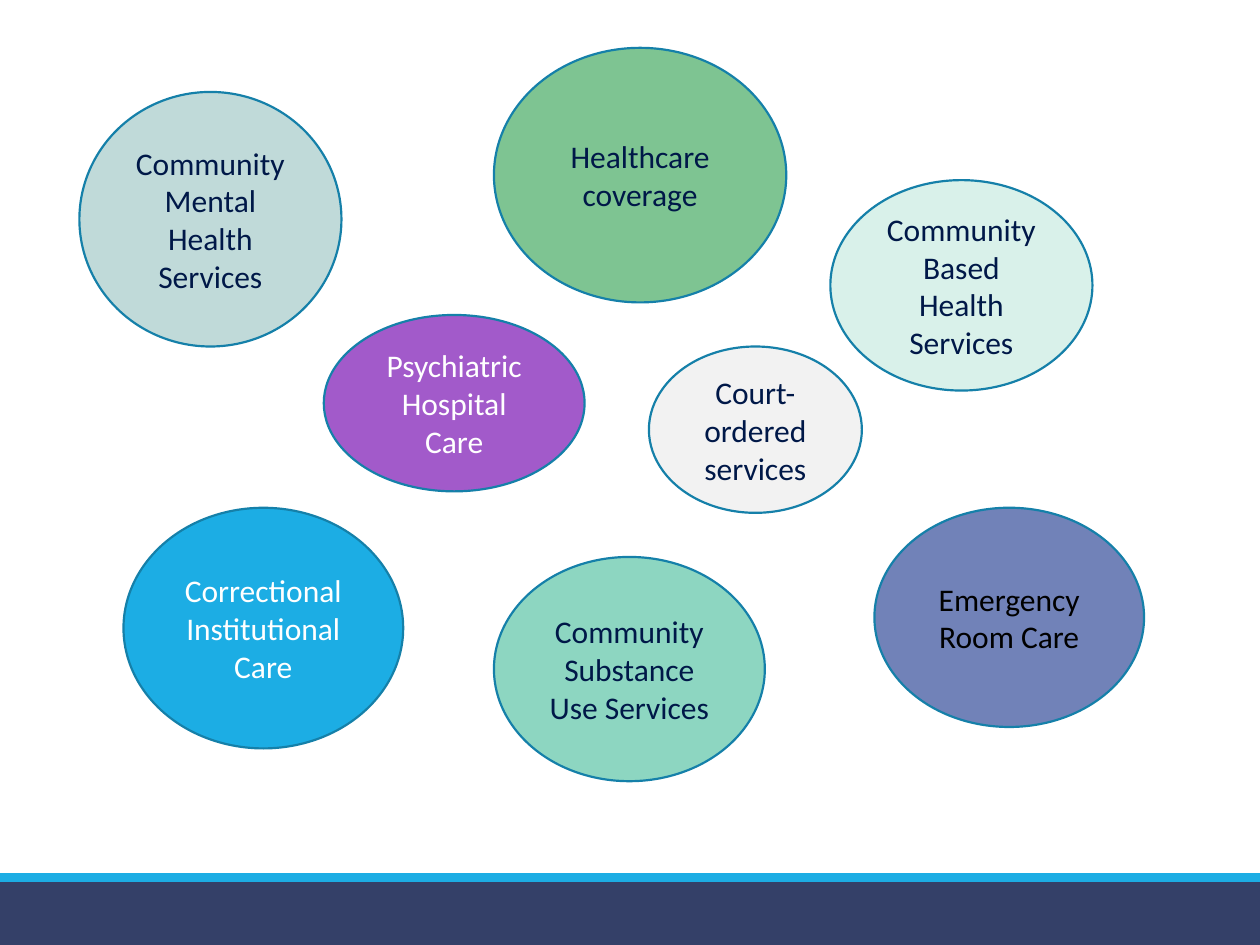
"""Build a slide of care services as scattered bubbles above a footer band."""
from pptx import Presentation
from pptx.dml.color import RGBColor
from pptx.enum.shapes import MSO_SHAPE
from pptx.enum.text import MSO_ANCHOR, PP_ALIGN
from pptx.util import Inches, Pt

NAVY, WHITE, BLACK = "001848", "FFFFFF", "000000"
EDGE = "1580A9"

BANDS = [
    ((0, 7, 10, 0.5), "344068"),
    ((0, 6.93, 10, 0.07), "1CADE4"),
]

BUBBLES = [
    ("Community Mental Health Services", (0.63, 0.73, 2.08, 2.02), "C0DAD9", NAVY),
    ("Community Substance Use Services", (3.92, 4.42, 2.15, 1.78), "8DD6C1", NAVY),
    ("Community Based Health Services", (6.59, 1.43, 2.08, 1.67), "D9F1EA", NAVY),
    ("Emergency Room Care", (6.94, 4.03, 2.14, 1.74), "7182B8", BLACK),
    ("Correctional Institutional Care", (0.98, 4.03, 2.22, 1.91), "1CADE4", WHITE),
    ("Psychiatric Hospital Care", (2.57, 2.5, 2.07, 1.4), "A25ACA", WHITE),
    ("Court-ordered services", (5.15, 2.75, 1.69, 1.32), "F2F2F2", NAVY),
    ("Healthcare coverage", (3.92, 0.38, 2.32, 2.02), "7EC492", NAVY),
]


def paint(target, color):
    target.solid()
    target.fore_color.rgb = RGBColor.from_string(color)


def add_form(slide, kind, box, color):
    form = slide.shapes.add_shape(kind, *map(Inches, box))
    form.shadow.inherit = False
    paint(form.fill, color)
    form.line.fill.background()
    return form


def add_bubble(slide, text, box, color, ink):
    bubble = add_form(slide, MSO_SHAPE.OVAL, box, color)
    paint(bubble.line.fill, EDGE)
    bubble.line.width = Pt(1.25)
    frame = bubble.text_frame
    frame.word_wrap = True
    frame.vertical_anchor = MSO_ANCHOR.MIDDLE
    para = frame.paragraphs[0]
    para.text = text
    para.alignment = PP_ALIGN.CENTER
    para.font.name = "Calibri"
    para.font.size = Pt(18)
    paint(para.font.fill, ink)


def main():
    deck = Presentation()
    deck.slide_width, deck.slide_height = Inches(10), Inches(7.5)
    slide = deck.slides.add_slide(deck.slide_layouts[6])
    paint(slide.background.fill, WHITE)
    for box, color in BANDS:
        add_form(slide, MSO_SHAPE.RECTANGLE, box, color)
    for bubble in BUBBLES:
        add_bubble(slide, *bubble)
    deck.save("out.pptx")


if __name__ == "__main__":
    main()
